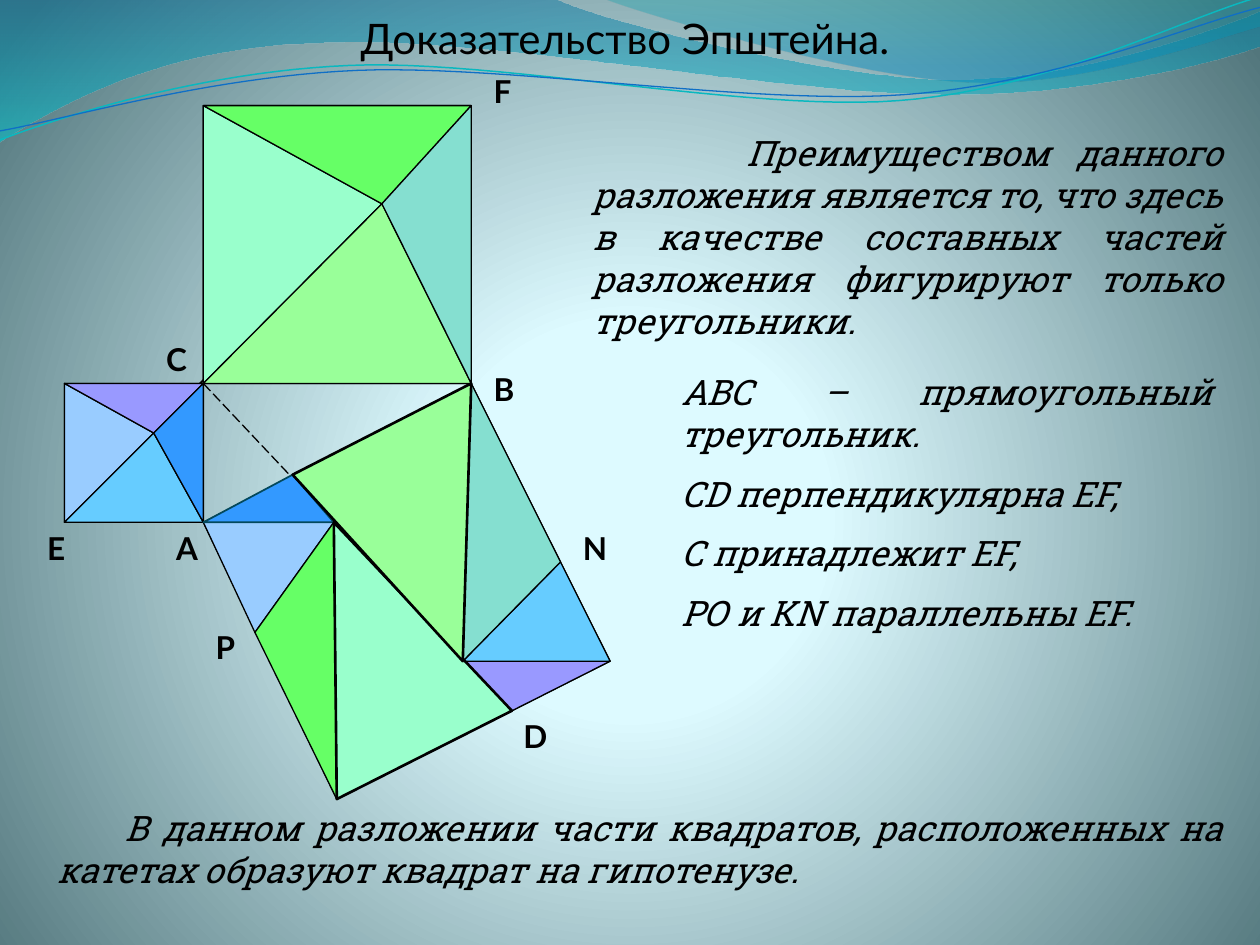
from lxml import etree
from pptx import Presentation
from pptx.dml.color import RGBColor
from pptx.enum.dml import MSO_LINE
from pptx.enum.shapes import MSO_CONNECTOR, MSO_SHAPE
from pptx.enum.text import PP_ALIGN
from pptx.oxml.ns import qn
from pptx.util import Cm, Pt

DASH, LINE = MSO_LINE.LONG_DASH, MSO_CONNECTOR.STRAIGHT
RIGHT_TRI = MSO_SHAPE.RIGHT_TRIANGLE
MID, JUST, LEFT = PP_ALIGN.CENTER, PP_ALIGN.JUSTIFY, PP_ALIGN.LEFT
SANS, SLAB = "Lato", "Roboto Slab"

HUE = {
    "ink": "000000", "edge": "03495C", "glow": "DEFBFF", "pale": "DDFAFF",
    "dusk": "52767C", "deep": "0074A1", "aqua": "00C6CF", "teal": "00A1A9",
    "sea": "008BBF", "thread": "0AB8BF", "cord": "0F6FC6",
    "ice": "99CCFF", "sky": "66CCFF", "lilac": "9999FF", "blue": "3399FF",
    "mint": "99FFCC", "lime": "99FF99", "green": "66FF66", "jade": "85DFD0",
}


def rgb(hue):
    return RGBColor.from_string(HUE[hue])


def ramp(fill, owner, stops, way, **spot):
    """Gradient of (place, hue, opacity) stops; spot is the focus of a radial one."""
    fill.gradient()
    grad = owner.find(".//" + qn("a:gradFill"))
    for child in list(grad):
        grad.remove(child)
    row = etree.SubElement(grad, qn("a:gsLst"))
    for place, hue, alpha in stops:
        stop = etree.SubElement(row, qn("a:gs"), pos=str(place * 1000))
        tint = etree.SubElement(stop, qn("a:srgbClr"), val=HUE[hue])
        if alpha < 100:
            etree.SubElement(tint, qn("a:alpha"), val=str(alpha * 1000))
    if way == "circle":
        path = etree.SubElement(grad, qn("a:path"), path=way)
        etree.SubElement(path, qn("a:fillToRect"),
                         {side: str(v * 1000) for side, v in spot.items()})
    else:
        etree.SubElement(grad, qn("a:lin"), ang=str(way * 60000), scaled="1")


def curve(points, steps=24):
    """Points along a chain of cubic Bezier arcs."""
    track = [points[0]]
    for i in range(0, len(points) - 1, 3):
        arc = points[i:i + 4]
        for k in range(1, steps + 1):
            t = k / steps
            mix = ((1 - t) ** 3, 3 * t * (1 - t) ** 2, 3 * t * t * (1 - t), t ** 3)
            track.append(tuple(sum(m * p[a] for m, p in zip(mix, arc)) for a in (0, 1)))
    return track


def pen(part, hue="ink", width=0.75, dash=None):
    part.line.color.rgb = rgb(hue)
    part.line.width = Pt(width)
    if dash:
        part.line.dash_style = dash


def draw(slide, box, points, close=False, fill=None):
    spots = [(Cm(box[0] + x), Cm(box[1] + y)) for x, y in points]
    path = slide.shapes.build_freeform(*spots[0])
    path.add_line_segments(spots[1:], close=close)
    part = path.convert_to_shape()
    part.shadow.inherit = False
    if fill:
        part.fill.solid()
        part.fill.fore_color.rgb = rgb(fill)
    else:
        part.fill.background()
    return part


def write(slide, box, lines, face, size, align, indent=0, gap=0, bold=False, slant=False):
    frame = slide.shapes.add_textbox(*map(Cm, box)).text_frame
    frame.word_wrap = True
    for i, line in enumerate(lines):
        para = frame.paragraphs[0] if i == 0 else frame.add_paragraph()
        para.text = line
        para.alignment = align
        if i and gap:
            para.space_before = Pt(gap)
        if indent:
            para._p.get_or_add_pPr().set("indent", str(Cm(indent)))
        font = para.font
        font.name, font.size, font.bold, font.italic = face, Pt(size), bold, slant
        font.color.rgb = rgb("ink")


def waves(slide, box):
    # Translucent bands
    top = [(11.18, -.03), (12.09, .43), (16.87, 1.6), (19.25, 1.6),
           (21.67, 1.6), (24.36, .66), (25.4, .23)]
    low = [(25.43, .91), (24.97, 1.12), (22.1, 1.93), (18.95, 1.9), (15.8, 1.9),
           (9.7, .71), (6.53, .86), (3.28, .91), (1.17, 2.11), (-.03, 2.87)]
    side = [(12.17, -.03), (12.93, .28), (17.32, 1.57), (19.53, 1.65),
            (21.74, 1.75), (24.41, .81), (25.4, .53)]
    bands = [
        ([(0, 0)] + curve(top) + curve(low), [(0, "deep", 45), (100, "aqua", 55)]),
        (curve(side) + [(25.4, 0)], [(0, "teal", 30), (80, "sea", 45)]),
    ]
    for points, stops in bands:
        band = draw(slide, box, points, close=True)
        ramp(band.fill, band.element.spPr, stops, 90)
        band.line.fill.background()

    # Thin lines
    threads = [
        ("thread", .85, [(0, 2.82), (1.22, 2.36), (4.01, 1.45), (7.04, 1.32), (10.03, 1.19),
                         (15.06, 2.26), (18.11, 2.03), (21.16, 1.8), (23.83, .38), (25.35, -.05)]),
        ("cord", .75, [(0, 2.64), (1.19, 2.44), (4.17, 1.55), (7.19, 1.42), (10.24, 1.3),
                       (15.16, 2.13), (18.21, 1.91), (21.23, 1.7), (23.9, .53), (25.4, .15)]),
    ]
    for hue, width, points in threads:
        pen(draw(slide, box, curve(points)), hue, width)


def figure(slide, box):
    # Vertices; I and T are the inner points of the two leg squares
    spot = {
        "A": (2.8, 8.4), "B": (8.2, 5.6), "C": (2.8, 5.6), "D": (9.02, 12.2),
        "E": (0, 8.4), "F": (8.2, 0), "G": (0, 5.6), "H": (2.8, 0),
        "I": (1.8, 6.6), "T": (6.4, 1.98), "K": (8.03, 11.2), "N": (10, 9.2),
        "O": (5.43, 8.4), "P": (3.84, 10.62), "Q": (4.6, 7.44),
        "R": (11, 11.2), "S": (5.49, 13.98),
    }

    def trace(names):
        return [spot[n] for n in names]

    # Right triangle ABC, turned so the right angle is at C
    (left, top), wide, tall = spot["C"], 5.4, 2.8
    turn = (wide - tall) / 2
    tri = slide.shapes.add_shape(RIGHT_TRI, Cm(box[0] + left + turn), Cm(box[1] + top - turn),
                                 Cm(tall), Cm(wide))
    tri.rotation = 90
    tri.shadow.inherit = False
    tri.fill.background()
    pen(tri)

    # Outline of the squares and the dashed cuts
    pen(draw(slide, box, trace("AEGCHFBRS"), close=True))
    pen(draw(slide, box, trace("EF")), width=1, dash=DASH)
    for names in ("BTH", "AIG", "AOS", "RKB"):
        pen(draw(slide, box, trace(names)), dash=DASH)
    for start, end in ("CD", "OP", "KN"):
        ends = [Cm(box[i] + spot[n][i]) for n in (start, end) for i in (0, 1)]
        cut = slide.shapes.add_connector(LINE, *ends)
        pen(cut, dash=DASH)
        etree.SubElement(cut.element.spPr, qn("a:effectLst"))

    # Coloured pieces
    pieces = [
        ("EGI", "ice"), ("EIA", "sky"), ("IGC", "lilac"), ("CIA", "blue"),
        ("CTH", "mint"), ("CBT", "lime"), ("TFH", "green"), ("TFB", "jade"),
        ("KRD", "lilac"), ("AOP", "ice"), ("KRN", "sky"), ("OSP", "green"),
        ("BNK", "jade"), ("AOQ", "blue", "edge", 1), ("OSD", "mint", "ink", 1.5),
        ("QBK", "lime", "ink", 1.5),
    ]
    for names, fill, *edge in pieces:
        pen(draw(slide, box, trace(names), close=True, fill=fill), *edge)

    # Vertex letters
    marks = [("B", 8.4, 5.2), ("С", 1.8, 4.6), ("А", 2, 8.4), ("F", 8.4, -.8),
             ("E", -.6, 8.4), ("D", 9, 12.2), ("P", 2.8, 10.4), ("N", 10.2, 8.4)]
    for mark, x, y in marks:
        write(slide, (box[0] + x, box[1] + y, .97, .97), [mark], SANS, 18, LEFT, bold=True)


def notes(slide, box):
    x, y, wide = box
    write(slide, (x, y, wide, 4.7),
          ["Преимуществом данного разложения является то, что здесь в качестве "
           "составных частей разложения фигурируют только треугольники."],
          SLAB, 20, JUST, indent=3.1, slant=True)
    write(slide, (x + 1.78, y + 4.83, wide - 2, 5.82),
          ["АВС – прямоугольный треугольник.", "СD перпендикулярна EF,",
           "C принадлежит EF,", "PО и KN параллельны EF."],
          SLAB, 20, JUST, gap=10, slant=True)


def main():
    deck = Presentation()
    deck.slide_width, deck.slide_height = Cm(25.4), Cm(19.05)
    slide = deck.slides.add_slide(deck.slide_layouts[6])
    ramp(slide.background.fill, slide.element,
         [(0, "glow", 100), (25, "pale", 100), (100, "dusk", 100)],
         "circle", l=10, t=110, r=10, b=100)
    waves(slide, (0, 0))
    figure(slide, (1.3, 2.13))
    write(slide, (2.7, .13, 19.8, 1.28), ["Доказательство Эпштейна."], SANS, 24, MID)
    notes(slide, (11.7, 2.52, 13.2))
    write(slide, (.9, 16.13, 24, 2.13),
          ["В данном разложении части квадратов, расположенных на катетах "
           "образуют квадрат на гипотенузе."],
          SLAB, 20, JUST, indent=1.37, slant=True)
    deck.save("out.pptx")


if __name__ == "__main__":
    main()
